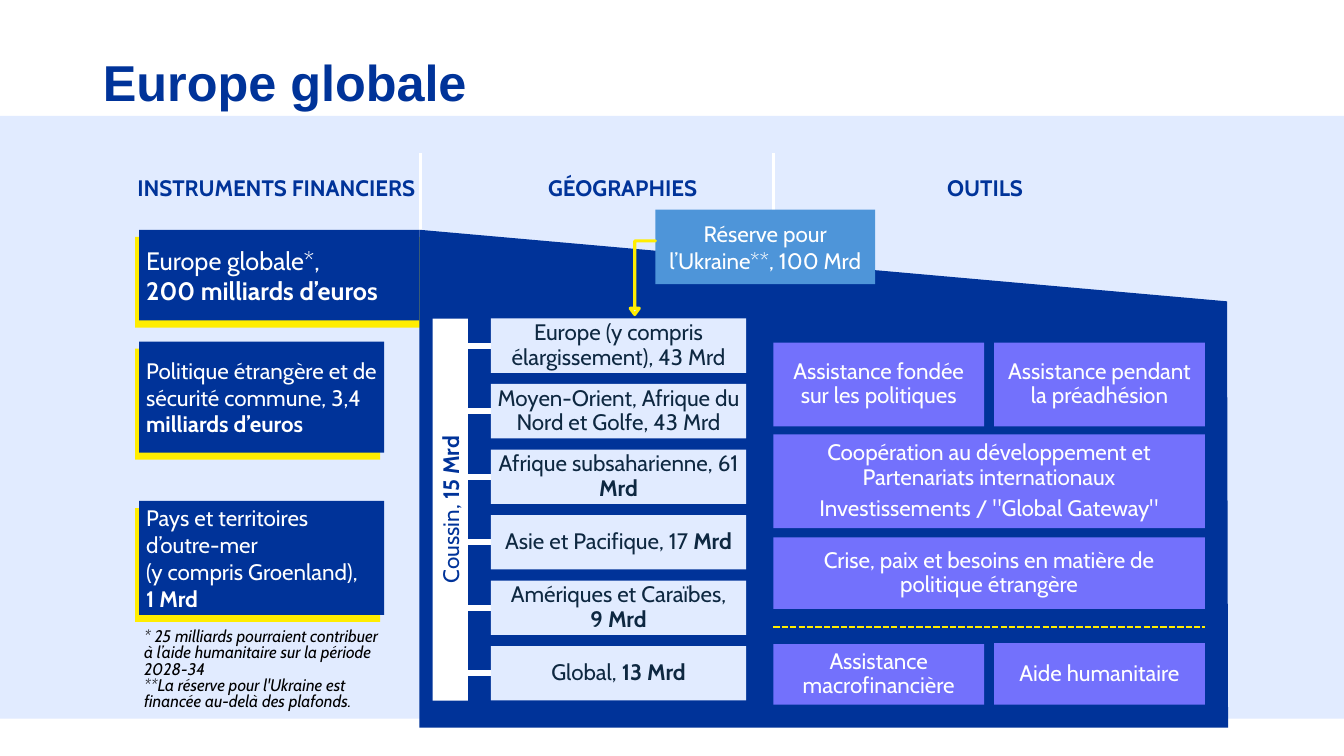
import pptx
import pptx.util
import pptx.dml.color
import pptx.enum.dml
import pptx.enum.shapes
import pptx.enum.text
import pptx.oxml.ns
import lxml.etree

COLOR = pptx.dml.color.RGBColor.from_string
ALIGN = pptx.enum.text.PP_ALIGN
ANCHOR = pptx.enum.text.MSO_ANCHOR
AUTO_SIZE = pptx.enum.text.MSO_AUTO_SIZE
SHAPE = pptx.enum.shapes.MSO_SHAPE

THEME = {
    "navy": COLOR("003399"), "pale": COLOR("E1EBFF"), "yellow": COLOR("FFED00"),
    "violet": COLOR("7371FC"), "sky": COLOR("4E95D9"), "ink": COLOR("0E2841"),
    "white": COLOR("FFFFFF"), "black": COLOR("000000"),
    "title_font": "Arial", "body_font": "Cabin",
    "title_size": 36, "lead_size": 18, "body_size": 16, "note_size": 12,
}

presentation = pptx.Presentation()
presentation.slide_width = pptx.util.Inches(13.33)
presentation.slide_height = pptx.util.Inches(7.5)
slide = presentation.slides.add_slide(presentation.slide_layouts[5])

# Grid: 13.33 columns by 7.5 rows
COLUMN = presentation.slide_width / 13.33
ROW = presentation.slide_height / 7.5
INSTRUMENT_LEFT, GEOGRAPHY_LEFT, TOOL_LEFT = 1.38, 4.87, 7.67
WEDGE_LEFT, WEDGE_RIGHT, WEDGE_BOTTOM = 4.16, 12.18, 7.22
BAND_TOP, HEADING_TOP, DIVIDER_TOP, INSTRUMENT_TOP = 1.15, 1.68, 1.52, 2.28


def add_box(left, top, width, height, fill=None, paragraphs=(), color="white",
            size="body_size", align=ALIGN.CENTER, inset=0.1, spacing=None,
            after=None, bold=None, italic=None):
    """Add a filled rectangle, or a text box without fill.

    Each paragraph is a pair: plain text and the bold text that follows it.
    """
    place = (int(left * COLUMN), int(top * ROW), int(width * COLUMN), int(height * ROW))
    if fill:
        shape = slide.shapes.add_shape(SHAPE.RECTANGLE, *place)
        shape.shadow.inherit = False
        shape.fill.solid()
        shape.fill.fore_color.rgb = THEME[fill]
        shape.line.fill.background()
    else:
        shape = slide.shapes.add_textbox(*place)
    frame = shape.text_frame
    frame.word_wrap = True
    if fill:
        frame.vertical_anchor = ANCHOR.MIDDLE
        frame.margin_left = frame.margin_right = int(inset * COLUMN)
        frame.margin_top = frame.margin_bottom = int(inset * ROW)
    else:
        frame.auto_size = AUTO_SIZE.SHAPE_TO_FIT_TEXT
    for index, (plain, strong) in enumerate(paragraphs):
        paragraph = frame.add_paragraph() if index else frame.paragraphs[0]
        paragraph.text = plain
        paragraph.alignment = align
        paragraph.line_spacing = spacing
        paragraph.space_after = after
        if strong:
            run = paragraph.add_run()
            run.text = strong
            run.font.bold = True
        for run in paragraph.runs:
            run.font.name = THEME["body_font"]
            run.font.size = pptx.util.Pt(THEME[size])
            run.font.color.rgb = THEME[color]
            run.font.italic = italic
            if bold:
                run.font.bold = True
    return shape


def add_line(left, top, right, bottom, color, weight):
    """Add a straight line without shadow."""
    line = slide.shapes.add_connector(
        pptx.enum.shapes.MSO_CONNECTOR.STRAIGHT,
        int(left * COLUMN), int(top * ROW), int(right * COLUMN), int(bottom * ROW))
    line.line.color.rgb = THEME[color]
    line.line.width = pptx.util.Pt(weight)
    lxml.etree.SubElement(line._element.spPr, pptx.oxml.ns.qn("a:effectLst"))
    return line


# Title
title = slide.shapes.title
title.left, title.top = int(0.92 * COLUMN), int(0.4 * ROW)
title.width, title.height = int(11.9 * COLUMN), int(0.89 * ROW)
title.fill.solid()
title.fill.fore_color.rgb = THEME["white"]
title.text_frame.text = "Europe globale"
title.text_frame.auto_size = AUTO_SIZE.NONE
title.text_frame.vertical_anchor = ANCHOR.MIDDLE
title_paragraph = title.text_frame.paragraphs[0]
title_paragraph.alignment = ALIGN.LEFT
title_paragraph.line_spacing = 0.9
title_font = title_paragraph.runs[0].font
title_font.name = THEME["title_font"]
title_font.size = pptx.util.Pt(THEME["title_size"])
title_font.bold = True
title_font.color.rgb = THEME["navy"]

# Background band, column dividers and headings
add_box(0, BAND_TOP, 13.33, 5.98, "pale")
for divider_left, divider_bottom in ((4.17, 2.92), (TOOL_LEFT, 3.12)):
    add_line(divider_left, DIVIDER_TOP, divider_left, divider_bottom, "white", 2.25)
for left, width, heading in ((1.24, 3, "INSTRUMENTS FINANCIERS"),
                             (4.85, 2.65, "GÉOGRAPHIES"),
                             (7.62, 4.3, "OUTILS")):
    add_box(left, HEADING_TOP, width, 0.37, paragraphs=[(heading, "")],
            color="navy", bold=True)

# Yellow edges behind the instruments
instruments = (
    (INSTRUMENT_TOP, 2.78, 0.9, 2.92, "lead_size",
     "Europe globale*,\n", "200 milliards d’euros"),
    (3.39, 2.43, 1.1, 2.43, "body_size",
     "Politique étrangère et de sécurité commune, 3,4 ", "milliards d’euros"),
    (4.97, 2.43, 1.13, 2.43, "body_size",
     "Pays et territoires\nd’outre-mer\n(y compris Groenland),\n", "1 Mrd"),
)
for top, width, height, edge_width, size, plain, strong in instruments:
    add_box(INSTRUMENT_LEFT - 0.04, top + 0.07, edge_width, height, "yellow")

# Navy wedge under geographies and tools
builder = slide.shapes.build_freeform(int(WEDGE_LEFT * COLUMN), int(INSTRUMENT_TOP * ROW))
builder.add_line_segments(
    [(int(x * COLUMN), int(y * ROW)) for x, y in
     ((WEDGE_LEFT, WEDGE_BOTTOM), (WEDGE_RIGHT, WEDGE_BOTTOM), (12.17, 2.99))], close=True)
wedge = builder.convert_to_shape()
wedge.shadow.inherit = False
wedge.fill.solid()
wedge.fill.fore_color.rgb = THEME["navy"]
wedge.line.fill.background()

# Instruments
for top, width, height, edge_width, size, plain, strong in instruments:
    add_box(INSTRUMENT_LEFT, top, width, height, "navy", [(plain, strong)],
            size=size, align=ALIGN.LEFT, inset=0.07)

# Tools
HALF, FULL = 2.09, 4.28
TOOL_RIGHT = TOOL_LEFT + FULL - HALF
tools = (
    (TOOL_LEFT, 3.4, HALF, 0.83, ["Assistance fondée sur les politiques"]),
    (TOOL_RIGHT, 3.4, HALF, 0.83, ["Assistance pendant la préadhésion"]),
    (TOOL_LEFT, 4.31, FULL, 0.93,
     ["Coopération au développement et Partenariats internationaux",
      'Investissements / "Global Gateway"']),
    (TOOL_LEFT, 5.33, FULL, 0.71,
     ["Crise, paix et besoins en matière de politique étrangère"]),
    (TOOL_LEFT, 6.39, HALF, 0.6, ["Assistance macrofinancière"]),
    (TOOL_RIGHT, 6.38, HALF, 0.61, ["Aide humanitaire"]),
)
for left, top, width, height, lines in tools:
    add_box(left, top, width, height, "violet", [(line, "") for line in lines],
            inset=0.12, spacing=0.9, after=pptx.util.Pt(5))
separator = add_line(TOOL_LEFT, 6.22, TOOL_LEFT + FULL, 6.22, "yellow", 1.5)
separator.line.dash_style = pptx.enum.dml.MSO_LINE.SQUARE_DOT

# Reserve and its bent arrow
add_box(6.5, 2.08, 2.18, 0.74, "sky", [("Réserve pour l’Ukraine**, 100 Mrd", "")])
arrow = slide.shapes.add_shape(SHAPE.BENT_UP_ARROW, int(6.25 * COLUMN), int(2.39 * ROW),
                               int(0.25 * COLUMN), int(0.73 * ROW))
arrow.rotation = 180
for index, adjustment in enumerate((0, 0.18, 0.25)):
    arrow.adjustments[index] = adjustment
arrow.shadow.inherit = False
arrow.fill.solid()
arrow.fill.fore_color.rgb = THEME["pale"]
arrow.line.color.rgb = THEME["yellow"]
arrow.line.width = pptx.util.Pt(2.25)

# Geographies, each linked to the cushion
regions = (
    ("Europe (y compris élargissement), 43 Mrd", ""),
    ("Moyen-Orient, Afrique du Nord et Golfe, 43 Mrd", ""),
    ("Afrique subsaharienne, 61 ", "Mrd"),
    ("Asie et Pacifique, 17 ", "Mrd"),
    ("Amériques et Caraïbes,\n", "9 Mrd"),
    ("Global, ", "13 Mrd"),
)
for index, region in enumerate(regions):
    top = 3.16 + 0.65 * index
    add_line(4.53, top + 0.27, 4.94, top + 0.27, "white", 4.5)
    add_box(GEOGRAPHY_LEFT, top, 2.53, 0.54, "pale", [region], color="ink",
            inset=0.05, spacing=0.9, after=pptx.util.Pt(5))
cushion = add_box(2.57, 4.88, 3.79, 0.35, "white", [("Coussin, ", "15 Mrd")],
                  color="navy", inset=0.04)
cushion.rotation = 270

# Footnotes
add_box(1.33, 6.2, 2.59, 0.91, paragraphs=[
    ("* 25 milliards pourraient contribuer à l’aide humanitaire sur la période 2028-34", ""),
    ("**La réserve pour l'Ukraine est financée au-delà des plafonds.", "")],
    color="black", size="note_size", align=ALIGN.LEFT, spacing=0.8, italic=True)

presentation.save("out.pptx")
